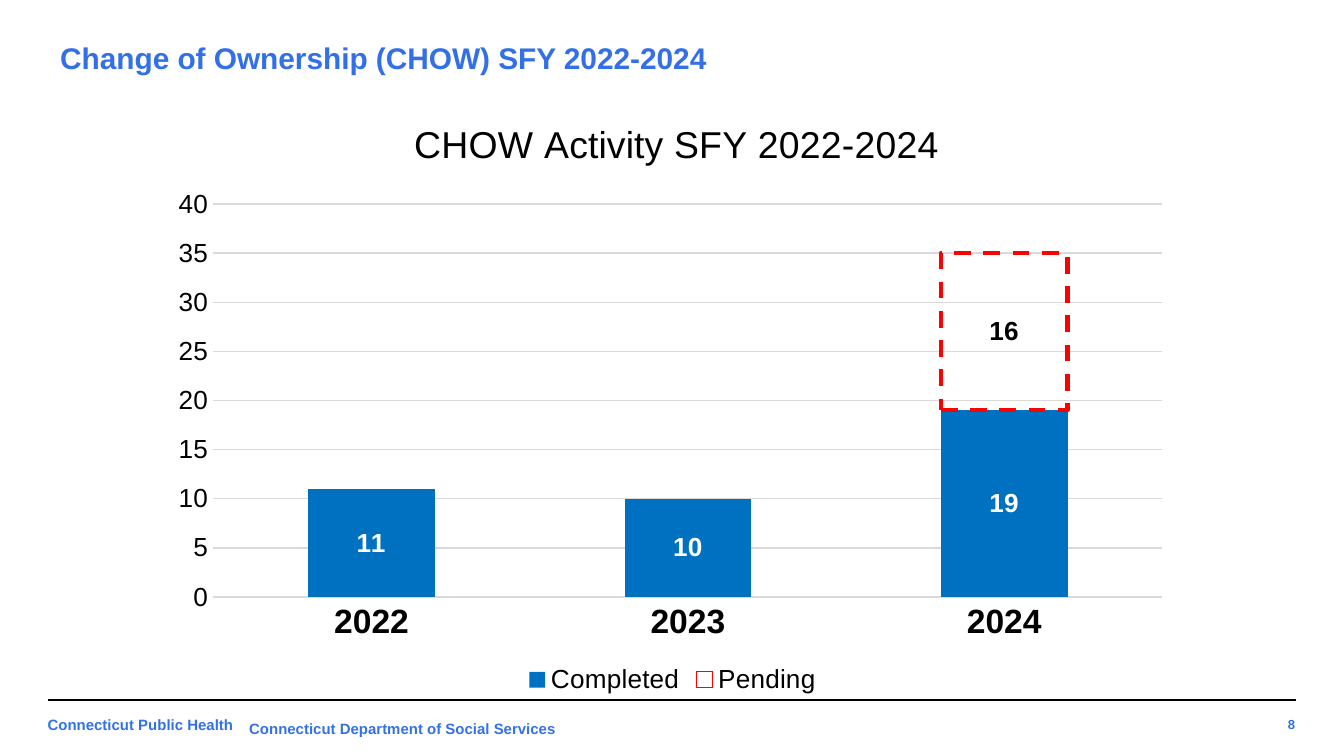
from lxml import etree
from pptx import Presentation, util as u
from pptx.chart.data import CategoryChartData
from pptx.dml.color import RGBColor
from pptx.enum import chart as ch, dml, shapes, text
from pptx.oxml import parse_xml
from pptx.oxml.ns import nsdecls, qn

PX = 9525  # 96 px to the inch
BLUE, BLACK, GREY, RED = "3371E7", "000000", "D9D9D9", "FF0000"


def style(font, size, color=BLACK, bold=False):
    """Format any font: of a run, an axis, a legend or data labels."""
    font.name, font.size, font.bold = "Arial", u.Pt(size), bold
    font.color.rgb = RGBColor.from_string(color)


def put_text(sp, words, size, color=BLUE, align=text.PP_ALIGN.LEFT,
             anchor=text.MSO_ANCHOR.TOP, margins=(10, 10), wrap=True):
    """Fill a shape with one bold line; margins are side and top/bottom in px."""
    tf = sp.text_frame
    tf.word_wrap, tf.vertical_anchor = wrap, anchor
    tf.auto_size = text.MSO_AUTO_SIZE.NONE
    tf.margin_left = tf.margin_right = margins[0] * PX
    tf.margin_top = tf.margin_bottom = margins[1] * PX
    p = tf.paragraphs[0]
    p.alignment = align
    r = p.add_run()
    r.text = words
    style(r.font, size, color, bold=True)


prs = Presentation()
prs.slide_width, prs.slide_height = 960 * PX, 540 * PX
s = prs.slides.add_slide(prs.slide_layouts[5])

# Footer
rule = s.shapes.add_connector(shapes.MSO_CONNECTOR.STRAIGHT,
                              926 * PX, 500 * PX, 34 * PX, 500 * PX)
rule.line.color.rgb = RGBColor.from_string(BLACK)
rule.line.width = u.Pt(0.75)
etree.SubElement(rule._element.spPr, qn("a:effectLst"))

footers = [
    ("8", (877, 505, 58, 24), 7,
     dict(align=text.PP_ALIGN.RIGHT, anchor=text.MSO_ANCHOR.MIDDLE)),
    ("Connecticut Public Health", (24, 504, 315, 33), 8, dict(margins=(10, 7))),
    ("Connecticut Department of Social Services", (168, 509, 241, 23), 8,
     dict(margins=(10, 5), wrap=False)),
]
for words, box, size, options in footers:
    sp = s.shapes.add_textbox(*(v * PX for v in box))
    put_text(sp, words, size, **options)

# Title
title = s.shapes.title
title.left, title.top, title.width, title.height = (v * PX for v in (33, 25, 895, 32))
put_text(title, "Change of Ownership (CHOW) SFY 2022-2024", 16, "3370E8",
         anchor=text.MSO_ANCHOR.MIDDLE)

# Chart
data = CategoryChartData()
data.categories = ["2022", "2023", "2024"]
data.add_series("Completed", [11, 10, 19])
data.add_series("Pending", [None, None, 16])
chart = s.shapes.add_chart(ch.XL_CHART_TYPE.COLUMN_STACKED,
                           *(v * PX for v in (116, 68, 729, 432)), data).chart
style(chart.font, 10)

chart.has_title = True
r = chart.chart_title.text_frame.paragraphs[0].add_run()
r.text = "CHOW Activity SFY 2022-2024"
style(r.font, 20)

chart.has_legend = True
chart.legend.position = ch.XL_LEGEND_POSITION.BOTTOM
chart.legend.include_in_layout = False
style(chart.legend.font, 14)

cat, val = chart.category_axis, chart.value_axis
for axis, size, bold in ((cat, 18, True), (val, 14, False)):
    axis.major_tick_mark = axis.minor_tick_mark = ch.XL_TICK_MARK.NONE
    style(axis.tick_labels.font, size, bold=bold)
val.minimum_scale, val.maximum_scale, val.major_unit = 0, 40, 5
val.has_major_gridlines = True
val.format.line.fill.background()
for line in (cat.format.line, val.major_gridlines.format.line):
    line.color.rgb = RGBColor.from_string(GREY)
    line.width = u.Pt(0.75)

plot = chart.plots[0]
plot.gap_width, plot.overlap, plot.vary_by_categories = 150, 100, False
completed, pending = plot.series
completed.format.fill.solid()
completed.format.fill.fore_color.rgb = RGBColor.from_string("0070C0")
# The legend key keeps a solid outline; only the 2024 column is dashed
column_2024 = pending.points[2]
for part in (pending, column_2024):
    part.format.fill.background()
    part.format.line.color.rgb = RGBColor.from_string(RED)
    part.format.line.width = u.Pt(2.25)
column_2024.format.line.dash_style = dml.MSO_LINE.DASH
for series, color in ((completed, "FFFFFF"), (pending, BLACK)):
    series.invert_if_negative = False
    labels = series.data_labels
    labels.show_value = True
    style(labels.font, 14, color, bold=True)

# Fixed places of the chart title and the plot area, as shares of the chart
title_place = {"xMode": "edge", "yMode": "edge", "x": 0.24, "y": 0.03}
plot_place = {"layoutTarget": "inner", "xMode": "edge", "yMode": "edge",
              "x": 0.05, "y": 0.18, "w": 0.93, "h": 0.65}
plot_area = chart._chartSpace.chart.plotArea
chart_title = chart.chart_title._element
for parent, place in ((chart_title, title_place), (plot_area, plot_place)):
    for old in parent.findall(qn("c:layout")):
        parent.remove(old)
    items = "".join(f'<c:{k} val="{v}"/>' for k, v in place.items())
    layout = parse_xml(f'<c:layout {nsdecls("c")}><c:manualLayout>{items}'
                       "</c:manualLayout></c:layout>")
    parent.insert(1 if parent is chart_title else 0, layout)

prs.save("out.pptx")
